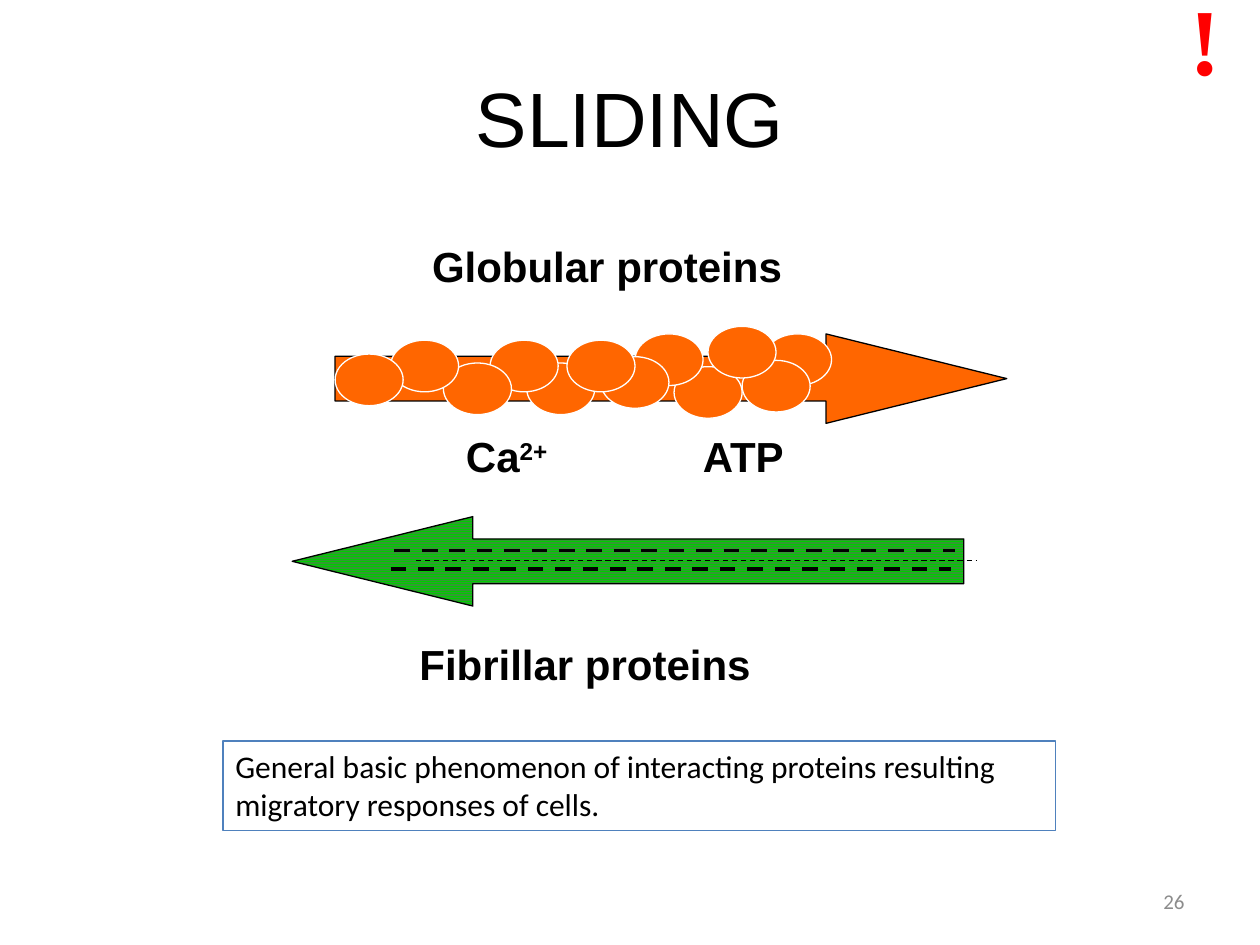
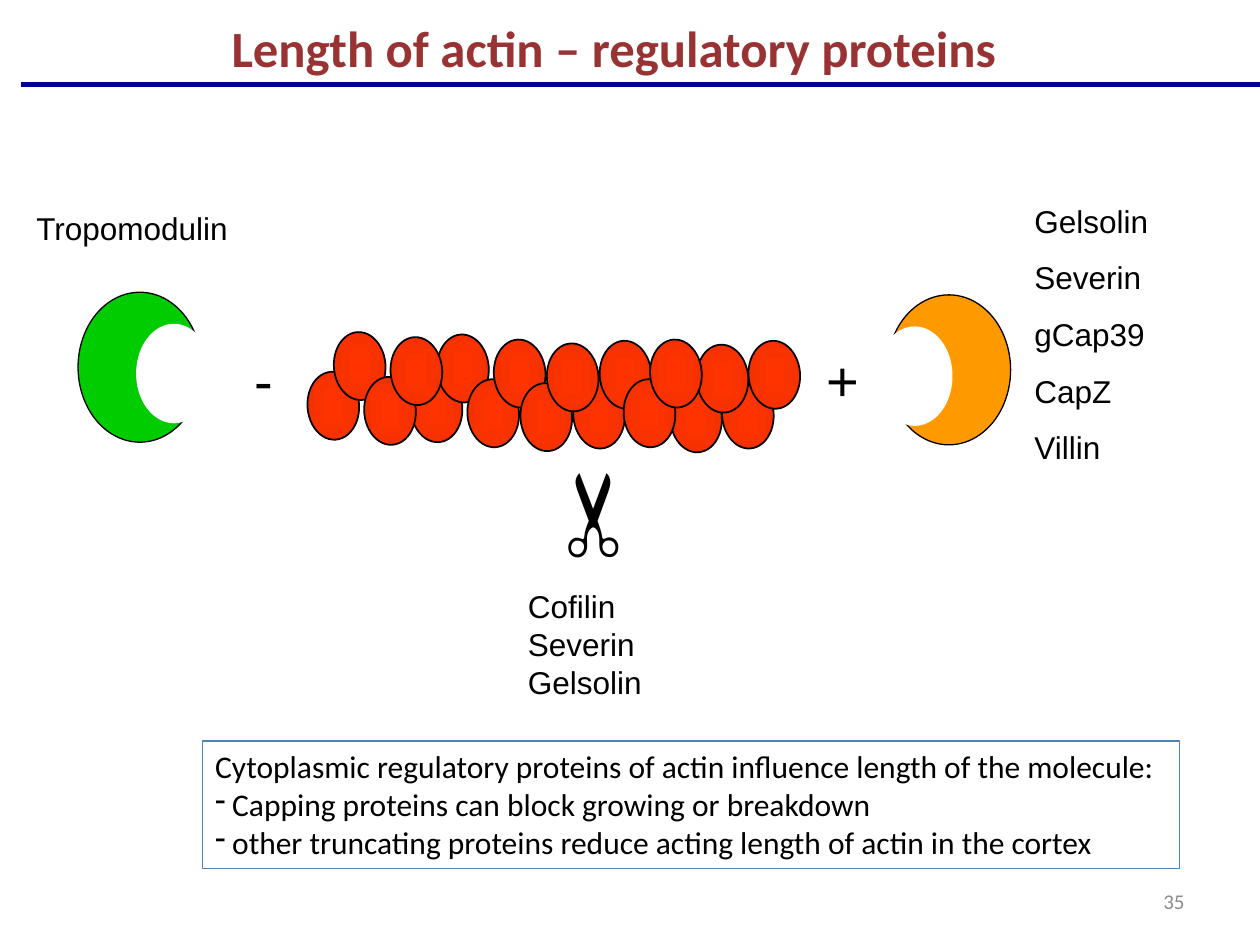
from lxml.etree import SubElement
from pptx import Presentation
from pptx.dml.color import RGBColor
from pptx.enum.dml import MSO_LINE, MSO_PATTERN
from pptx.enum.shapes import MSO_CONNECTOR, MSO_SHAPE
from pptx.enum.text import MSO_ANCHOR, MSO_AUTO_SIZE, PP_ALIGN
from pptx.oxml.ns import qn
from pptx.util import Pt

BLACK = RGBColor(0x00, 0x00, 0x00)
WHITE = RGBColor(0xFF, 0xFF, 0xFF)
ORANGE = RGBColor(0xFF, 0x66, 0x00)
AMBER = RGBColor(0xFF, 0x99, 0x00)
GREEN = RGBColor(0x00, 0xCC, 0x00)
DARK_GREEN = RGBColor(0x33, 0x99, 0x33)
RED = RGBColor(0xFF, 0x00, 0x00)
ACTIN_INNER = RGBColor(0xFF, 0x33, 0x00)
ACTIN_OUTER = RGBColor(0xF3, 0x31, 0x00)
MAROON = RGBColor(0x99, 0x33, 0x33)
NAVY = RGBColor(0x00, 0x00, 0x99)
BLUE = RGBColor(0x4F, 0x81, 0xBD)
GREY = RGBColor(0x8C, 0x8C, 0x8C)

TITLE = {"name": "Arial", "size": Pt(44), "bold": False}
HEADING = {"name": "Calibri", "size": Pt(29), "bold": True}
LABEL = {"name": "Arial", "size": Pt(24), "bold": True}
NAMES = {"name": "Arial", "size": Pt(18)}
SIGN = {"name": "Arial", "size": Pt(32)}
SCISSORS = {"name": "Arial", "size": Pt(54)}
ALERT = {"name": "Times New Roman", "size": Pt(54), "bold": True}
NOTE = {"name": "Calibri", "size": Pt(18)}
NUMBER = {"name": "Calibri", "size": Pt(12)}

DASH_INDENT = Pt(9.7)
GLOBULE = (38.9, 29.5)
ACTIN = (29.5, 38.9)
ACTIN_STEP = (15.1, -22.7)
ARROW = (383.8, 51.1)
CAP = (70.6, 85.7)
BITE = (43.2, 56.9)

GLOBULES = [
    (301, 207.4), (280.1, 194.4), (253.4, 207.4), (223.2, 194.4),
    (191.5, 202.3), (385.2, 209.5), (362.9, 190.8), (343.4, 203.8),
    (324, 194.4), (436.3, 190.8), (424.1, 205.9), (404.6, 186.5),
]
ACTIN_PAIRS = [
    (175.7, 212.4), (234.7, 213.8), (208.1, 215.3), (267.1, 216.7),
    (327.6, 217.4), (297.4, 218.9), (412.6, 217.4), (383, 219.6),
    (356.4, 216.7),
]


class Deck:
    def __init__(self):
        self.prs = Presentation()
        self.prs.slide_width, self.prs.slide_height = Pt(720), Pt(540)
        self.slide = None

    def new_slide(self, layout, number):
        self.slide = self.prs.slides.add_slide(self.prs.slide_layouts[layout])
        self.text((516.2, 500.4, 167.8, 28.8), [number], NUMBER, GREY,
                  align=PP_ALIGN.RIGHT, anchor=MSO_ANCHOR.MIDDLE)

    def run(self, p, text, fmt, color):
        r = p.add_run()
        r.text = text
        for name, value in fmt.items():
            setattr(r.font, name, value)
        r.font.color.rgb = color
        return r

    def set_lines(self, sp, lines, fmt, color=BLACK, align=PP_ALIGN.LEFT,
                  anchor=MSO_ANCHOR.TOP, spacing=1.0, dashed=False):
        tf = sp.text_frame
        tf.word_wrap = True
        tf.auto_size = MSO_AUTO_SIZE.NONE
        tf.vertical_anchor = anchor
        for i, line in enumerate(lines):
            p = tf.add_paragraph() if i else tf.paragraphs[0]
            pPr = p._p.get_or_add_pPr()
            indent = DASH_INDENT if dashed and i else 0
            pPr.set("marL", str(int(indent)))
            pPr.set("indent", str(int(-indent)))
            if indent:
                SubElement(pPr, qn("a:buChar")).set("char", "-")
            else:
                SubElement(pPr, qn("a:buNone"))
            p.alignment = align
            p.line_spacing = spacing
            p.space_before = Pt(0)
            self.run(p, line, fmt, color)
        return sp

    def text(self, box, lines, fmt, color=BLACK, **layout):
        sp = self.slide.shapes.add_textbox(*map(Pt, box))
        return self.set_lines(sp, lines, fmt, color, **layout)

    def placeholder(self, idx, box, lines, fmt, color=BLACK, **layout):
        sp = self.slide.placeholders[idx]
        sp.left, sp.top, sp.width, sp.height = map(Pt, box)
        return self.set_lines(sp, lines, fmt, color, **layout)

    def title(self, box, text, fmt, color=BLACK):
        self.placeholder(0, box, [text], fmt, color,
                         align=PP_ALIGN.CENTER, anchor=MSO_ANCHOR.MIDDLE)

    def shape(self, kind, at, size, fill=None, line=BLACK, weight=0.75):
        sp = self.slide.shapes.add_shape(kind, *map(Pt, (*at, *size)))
        sp.shadow.inherit = False
        if fill is None:
            sp.fill.background()
        else:
            sp.fill.solid()
            sp.fill.fore_color.rgb = fill
        if line is None:
            sp.line.fill.background()
        else:
            sp.line.color.rgb = line
            sp.line.width = Pt(weight)
        return sp

    def arrow(self, kind, at, fill):
        sp = self.shape(kind, at, ARROW, fill)
        sp.adjustments[0] = 0.5
        sp.adjustments[1] = 2.02
        return sp

    def line(self, start, end, color, weight, dash=None):
        ln = self.slide.shapes.add_connector(
            MSO_CONNECTOR.STRAIGHT, *map(Pt, (*start, *end)))
        ln.line.color.rgb = color
        ln.line.width = Pt(weight)
        if dash:
            ln.line.dash_style = dash
        SubElement(ln._element.spPr, qn("a:effectLst"))

    def note(self, box, lines, **layout):
        sp = self.shape(MSO_SHAPE.RECTANGLE, box[:2], box[2:], line=BLUE)
        self.set_lines(sp, lines, NOTE, **layout)

    def actin(self, x, y):
        sp = self.shape(MSO_SHAPE.OVAL, (x, y), ACTIN, ACTIN_INNER, weight=1)
        sp.rotation = 176
        sp.fill.gradient()
        for stop, color in zip(sp.fill.gradient_stops, (ACTIN_INNER, ACTIN_OUTER)):
            stop.color.rgb = color
        grad = sp._element.spPr.find(qn("a:gradFill"))
        grad.remove(grad.find(qn("a:lin")))
        shade = SubElement(grad, qn("a:path"))
        shade.set("path", "shape")
        rect = SubElement(shade, qn("a:fillToRect"))
        for side in "ltrb":
            rect.set(side, "50000")

    def cap(self, at, bite_at, fill):
        self.shape(MSO_SHAPE.OVAL, at, CAP, fill)
        self.shape(MSO_SHAPE.OVAL, bite_at, BITE, WHITE, None)


def sliding(deck):
    deck.new_slide(5, "26")
    deck.title((36, 21.6, 648, 90), "SLIDING", TITLE)
    deck.text((239.8, 133.9, 230, 36), ["Globular proteins"], LABEL)
    deck.text((232.6, 361.4, 215, 36), ["Fibrillar proteins"], LABEL)
    calcium = deck.text((259.2, 242.6, 75, 36), ["Ca"], LABEL)
    r = deck.run(calcium.text_frame.paragraphs[0], "2+", LABEL, BLACK)
    r.font._element.set("baseline", "30000")
    deck.text((394.6, 242.6, 75, 36), ["ATP"], LABEL)

    deck.arrow(MSO_SHAPE.RIGHT_ARROW, (191.5, 190.8), ORANGE)
    for at in GLOBULES:
        deck.shape(MSO_SHAPE.OVAL, at, GLOBULE, ORANGE, WHITE)

    fibre = deck.arrow(MSO_SHAPE.LEFT_ARROW, (167, 295.2), GREEN)
    fibre.fill.patterned()
    fibre.fill.pattern = MSO_PATTERN.NARROW_HORIZONTAL
    fibre.fill.fore_color.rgb = GREEN
    fibre.fill.back_color.rgb = DARK_GREEN
    for x, y, weight in ((237.6, 320.4, 0.75), (225.4, 314.6, 2.25),
                         (223.2, 325.4, 2.25)):
        deck.line((x, y), (x + 320.4, y), BLACK, weight, MSO_LINE.DASH)

    deck.text((672.5, -14.4, 36, 72.7), ["!"], ALERT, RED)
    deck.note((127.4, 423.4, 475.9, 51.1),
              ["General basic phenomenon of interacting proteins resulting "
               "migratory responses of cells."])


def actin_length(deck):
    deck.new_slide(3, "35")
    deck.title((113.5, 5.8, 475, 42.5), "Length of actin – regulatory proteins",
               HEADING, MAROON)
    deck.line((12.2, 48.2), (720, 48.2), NAVY, 3)
    for x, y in ACTIN_PAIRS:
        deck.actin(x, y)
        deck.actin(x + ACTIN_STEP[0], y + ACTIN_STEP[1])

    deck.text((138.2, 193.7, 30, 45.4), ["-"], SIGN)
    deck.text((465.1, 193.7, 36, 45.4), ["+"], SIGN)
    scissors = deck.text((298.1, 254.2, 76.3, 72), ["✂"], SCISSORS)
    scissors.rotation = 270
    deck.cap((506.9, 168.5), (501.1, 186.5), AMBER)
    deck.cap((44.6, 167), (77.8, 185), GREEN)

    deck.text((13.7, 115.9, 161.3, 36), ["Tropomodulin"], NAMES)
    deck.placeholder(1, (294.5, 331.9, 101.5, 86),
                     ["Cofilin", "Severin", "Gelsolin"], NAMES)
    deck.placeholder(2, (583.9, 100.8, 103, 200),
                     ["Gelsolin", "Severin", "gCap39", "CapZ", "Villin"],
                     NAMES, spacing=1.5)
    deck.note((115.9, 423.4, 558, 72.7),
              ["Cytoplasmic regulatory proteins of actin influence length of the molecule:",
               "Capping proteins can block growing or breakdown",
               "other truncating proteins reduce acting length of actin in the cortex"],
              dashed=True)


def main():
    deck = Deck()
    sliding(deck)
    actin_length(deck)
    deck.prs.save("out.pptx")


if __name__ == "__main__":
    main()
